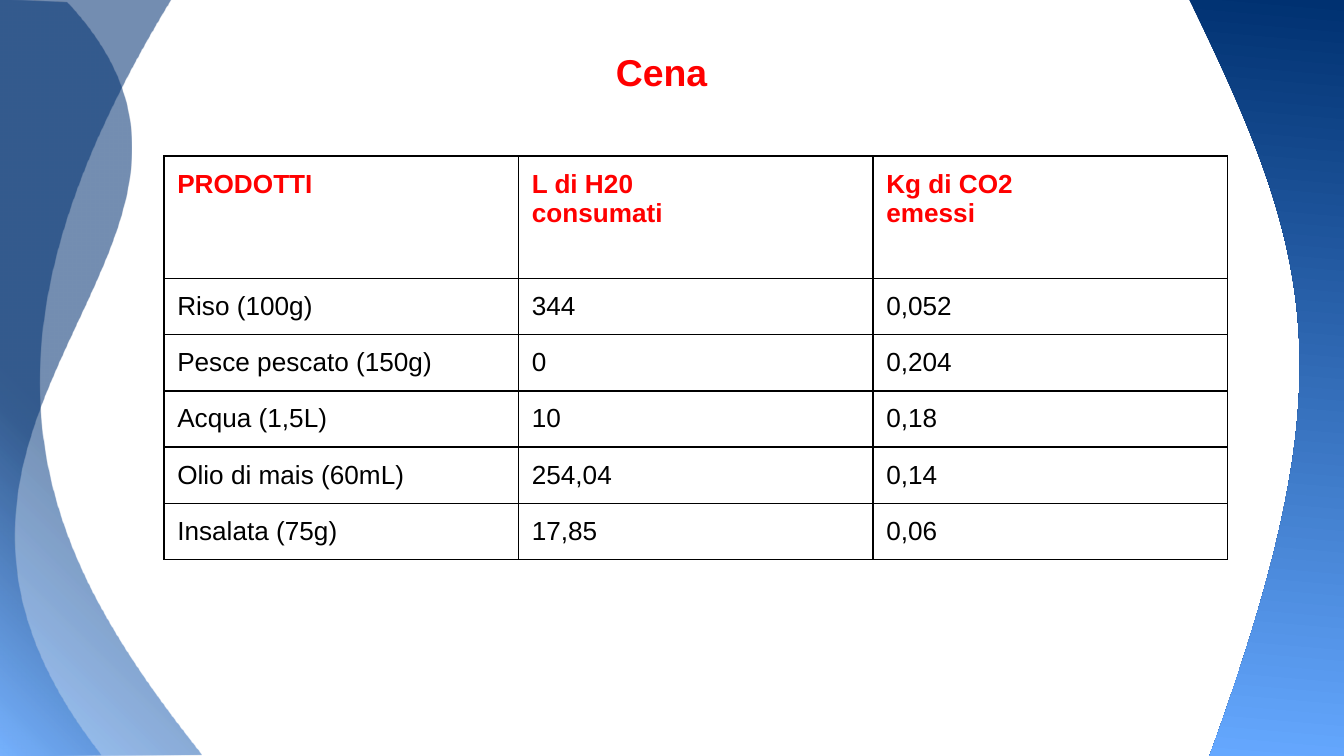
from dataclasses import dataclass

from lxml import etree
from pptx import Presentation
from pptx import util as u
from pptx.dml.color import RGBColor
from pptx.enum import text
from pptx.oxml import ns


@dataclass(frozen=True)
class Theme:
    font: str = "Arial"
    accent: str = "FF0000"
    ink: str = "000000"
    navy: str = "003171"
    sky: str = "549FFF"
    light_sky: str = "65A8FF"
    title_size: int = 20
    table_size: int = 14
    border: float = 0.75
    inset: float = 0.25


THEME = Theme()
WIDTH, HEIGHT = 25.4, 14.29

ROWS = [
    ("PRODOTTI", "L di H20\nconsumati", "Kg di CO2\nemessi"),
    ("Riso (100g)", "344", "0,052"),
    ("Pesce pescato (150g)", "0", "0,204"),
    ("Acqua (1,5L)", "10", "0,18"),
    ("Olio di mais (60mL)", "254,04", "0,14"),
    ("Insalata (75g)", "17,85", "0,06"),
]


def write_text(frame, content, *, size, color, bold=False, align=text.PP_ALIGN.LEFT):
    frame.text = content
    frame.word_wrap = True
    for paragraph in frame.paragraphs:
        paragraph.alignment = align
        for run in paragraph.runs:
            run.font.name = THEME.font
            run.font.size = u.Pt(size)
            run.font.bold = bold
            run.font.color.rgb = RGBColor.from_string(color)


def set_margins(target):
    for side in ("left", "top", "right", "bottom"):
        setattr(target, f"margin_{side}", u.Cm(THEME.inset))


def add_node(parent, tag, **attributes):
    return etree.SubElement(parent, ns.qn(tag), {k: str(v) for k, v in attributes.items()})


def gradient(stops, alpha=100):
    fill = etree.Element(ns.qn("a:gradFill"), rotWithShape="1")
    stop_list = add_node(fill, "a:gsLst")
    for position, color in stops:
        stop = add_node(stop_list, "a:gs", pos=position * 1000)
        tint = add_node(stop, "a:srgbClr", val=color)
        if alpha < 100:
            add_node(tint, "a:alpha", val=alpha * 1000)
    return fill


def linear_gradient(stops, angle):
    fill = gradient(stops)
    add_node(fill, "a:lin", ang=angle * 60000, scaled=0)
    return fill


def corner_gradient(stops, alpha):
    fill = gradient(stops, alpha)
    path = add_node(fill, "a:path", path="circle")
    add_node(path, "a:fillToRect", l=0, t=100000, r=100000, b=0)
    return fill


class SlideBuilder:
    def __init__(self, presentation, theme):
        self.theme = theme
        self.slide = presentation.slides.add_slide(presentation.slide_layouts[5])

    def wave(self, corners, curve, fill):
        start, *controls, end = curve
        outline = [(u.Cm(x), u.Cm(y)) for x, y in [end, *corners, start, end]]
        builder = self.slide.shapes.build_freeform(*outline[0])
        builder.add_line_segments(outline[1:], close=True)
        shape = builder.convert_to_shape()
        shape.shadow.inherit = False
        shape.line.fill.background()
        shape.fill.background()
        properties = shape._element.spPr
        properties.replace(properties.find(ns.qn("a:noFill")), fill)
        last_segment = list(properties.iter(ns.qn("a:lnTo")))[-1]
        bend = etree.Element(ns.qn("a:cubicBezTo"))
        for x, y in [*controls, end]:
            add_node(bend, "a:pt", x=u.Cm(x) - shape.left, y=u.Cm(y) - shape.top)
        last_segment.getparent().replace(last_segment, bend)

    def title(self, content, left, top, width, height):
        title = self.slide.shapes.title
        title.left, title.top = u.Cm(left), u.Cm(top)
        title.width, title.height = u.Cm(width), u.Cm(height)
        frame = title.text_frame
        set_margins(frame)
        frame.auto_size = text.MSO_AUTO_SIZE.NONE
        frame.vertical_anchor = text.MSO_ANCHOR.TOP
        write_text(frame, content, size=self.theme.title_size, color=self.theme.accent,
                   bold=True, align=text.PP_ALIGN.CENTER)

    def table(self, rows, left, top, column_width, header_height, row_height):
        columns = len(rows[0])
        height = header_height + row_height * (len(rows) - 1)
        table = self.slide.shapes.add_table(
            len(rows), columns, u.Cm(left), u.Cm(top),
            u.Cm(column_width * columns), u.Cm(height)).table
        table.first_row = table.horz_banding = False
        for column in table.columns:
            column.width = u.Cm(column_width)
        for index, values in enumerate(rows):
            header = index == 0
            table.rows[index].height = u.Cm(header_height if header else row_height)
            for cell, value in zip(table.rows[index].cells, values):
                set_margins(cell)
                self.borders(cell)
                cell.fill.background()
                write_text(cell.text_frame, value, size=self.theme.table_size, bold=header,
                           color=self.theme.accent if header else self.theme.ink)

    def borders(self, cell):
        properties = cell._tc.get_or_add_tcPr()
        for side in "LRTB":
            line = add_node(properties, f"a:ln{side}", w=u.Pt(self.theme.border))
            add_node(add_node(line, "a:solidFill"), "a:srgbClr", val=self.theme.ink)


def main():
    presentation = Presentation()
    presentation.slide_width, presentation.slide_height = u.Cm(WIDTH), u.Cm(HEIGHT)
    builder = SlideBuilder(presentation, THEME)

    left_stops = [(0, THEME.sky), (41, THEME.navy), (100, THEME.navy)]
    left_corners = [(0, HEIGHT), (0, 0)]
    left_curves = [
        [(3.23, 0), (-0.97, 6.91), (0.84, 10.49), (3.81, 14.25)],
        [(1.27, 0.05), (5.51, 4.62), (-3.1, 7.82), (1.91, 14.25)],
    ]
    for curve in left_curves:
        builder.wave(left_corners, curve, corner_gradient(left_stops, alpha=54))
    builder.wave([(WIDTH, HEIGHT), (WIDTH, 0)],
                 [(22.48, 0), (24.92, 4.98), (25.43, 7.21), (22.86, HEIGHT)],
                 linear_gradient([(0, THEME.navy), (100, THEME.light_sky)], angle=95))

    builder.title("Cena", left=4.1, top=0.67, width=16.81, height=1.27)
    builder.table(ROWS, left=3.1, top=2.95, column_width=6.7,
                  header_height=2.32, row_height=1.06)
    presentation.save("out.pptx")


if __name__ == "__main__":
    main()
